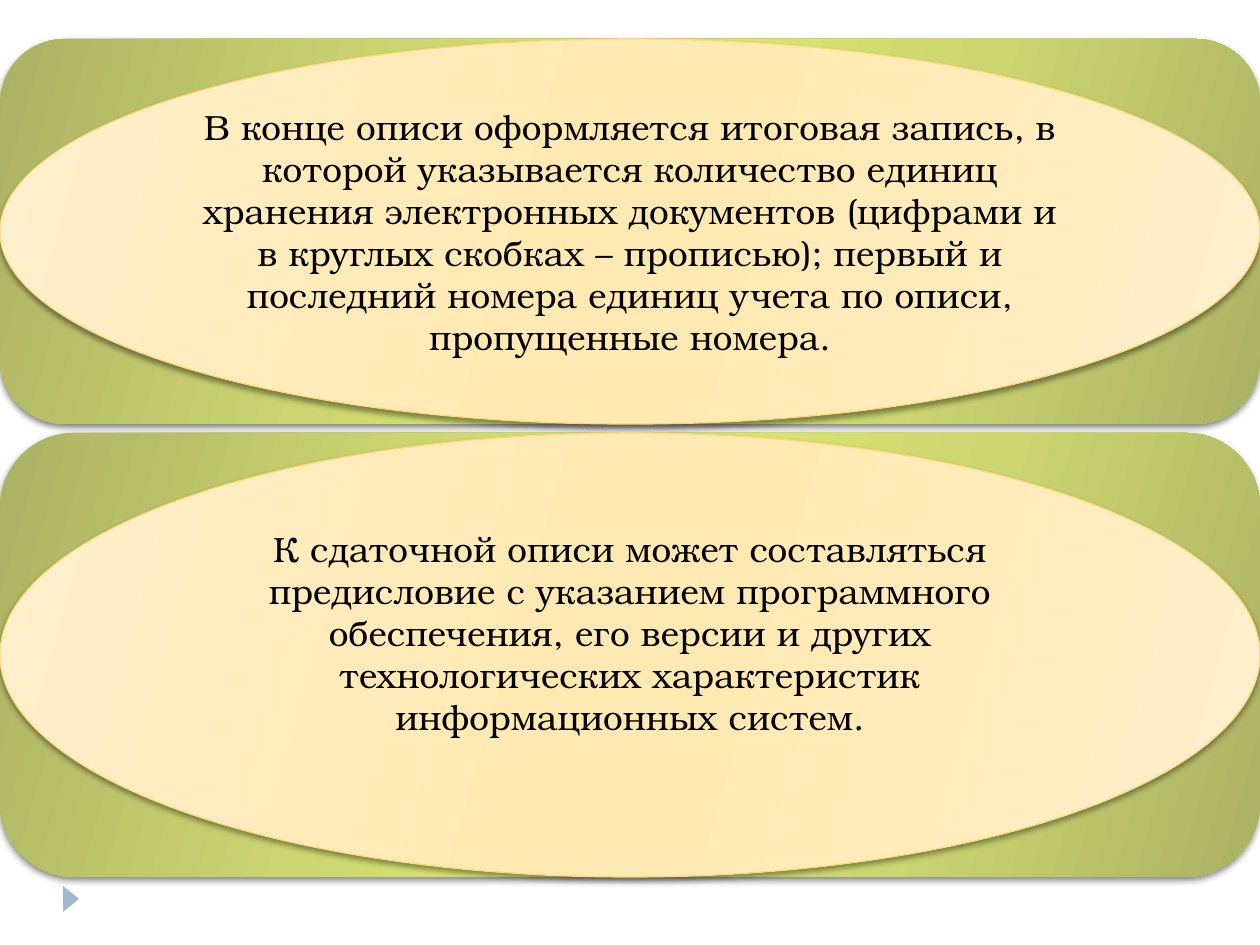
"""Build a slide of two green panels, each holding an oval with a note on archive inventories."""
from lxml.etree import SubElement
from pptx import Presentation
from pptx.dml.color import RGBColor
from pptx.enum.shapes import MSO_SHAPE as Shape
from pptx.enum.text import MSO_ANCHOR as Anchor, PP_ALIGN as Align
from pptx.oxml.ns import qn
from pptx.util import Pt

PX = 914400 // 126
WIDTH, HEIGHT = 1260, 945
FONT = "TeX Gyre Bonum"
BLACK = RGBColor(0x00, 0x00, 0x00)
BLUE = RGBColor(0x9F, 0xB8, 0xCD)
GOLD = RGBColor(0xFA, 0xDA, 0x7A)
GREENS = [RGBColor(0xAC, 0xB2, 0x64), RGBColor(0xCC, 0xD5, 0x70), RGBColor(0xD9, 0xE3, 0x71)]
CREAMS = [RGBColor(0xFF, 0xF0, 0xCF), RGBColor(0xFF, 0xEB, 0xBA), RGBColor(0xFF, 0xE9, 0xB3)]
STOPS = [0, 30, 45, 55, 73, 100]

PANELS = [
    (39, 385, 6, "В конце описи оформляется итоговая запись, в которой указывается "
     "количество единиц хранения электронных документов (цифрами и в круглых скобках – "
     "прописью); первый и последний номера единиц учета по описи, пропущенные номера."),
    (433, 444, 52, "К сдаточной описи может составляться предисловие с указанием "
     "программного обеспечения, его версии и других технологических характеристик "
     "информационных систем."),
]


def add_shape(slide, kind, left, top, width, height):
    """Add a preset shape without line or shadow."""
    shape = slide.shapes.add_shape(kind, left * PX, top * PX, width * PX, height * PX)
    shape.shadow.inherit = False
    shape.line.fill.background()
    return shape


def add_color(parent, color, alpha=None):
    """Append an RGB colour, with opacity in percent if given."""
    element = SubElement(parent, qn("a:srgbClr"), val=str(color))
    if alpha is not None:
        SubElement(element, qn("a:alpha"), val=str(alpha * 1000))


def set_gradient(shape, colors):
    """Fill the shape with a gradient that runs through the colours and back."""
    shape.fill.gradient()
    shape.fill.gradient_angle = 344
    stop_list = shape._element.spPr.find(".//" + qn("a:gsLst"))
    for stop in list(stop_list):
        stop_list.remove(stop)
    for position, color in zip(STOPS, colors + colors[::-1]):
        add_color(SubElement(stop_list, qn("a:gs"), pos=str(position * 1000)), color)


def set_shadow(shape, alpha, blur):
    """Cast a soft black shadow downwards."""
    effects = shape._element.spPr.find(qn("a:effectLst"))
    shadow = SubElement(effects, qn("a:outerShdw"), blurRad=str(Pt(blur)), dist=str(Pt(2)),
                        dir="5400000", rotWithShape="0")
    add_color(shadow, BLACK, alpha)


def set_text(shape, text, bottom_margin):
    """Write centred text into the shape."""
    frame = shape.text_frame
    frame.text = text
    frame.word_wrap = True
    frame.vertical_anchor = Anchor.MIDDLE
    frame.margin_bottom = bottom_margin * PX
    paragraph = frame.paragraphs[0]
    paragraph.alignment = Align.CENTER
    font = paragraph.runs[0].font
    font.name, font.size = FONT, Pt(20)
    font.color.rgb = BLACK


def add_panel(slide, top, height, bottom_margin, text):
    """Add a full-width rounded panel with an oval note on it."""
    panel = add_shape(slide, Shape.ROUNDED_RECTANGLE, 0, top, WIDTH, height)
    set_gradient(panel, GREENS)
    set_shadow(panel, 50, 4)
    oval = add_shape(slide, Shape.OVAL, 0, top, WIDTH, height)
    set_gradient(oval, CREAMS)
    oval.line.color.rgb = GOLD
    oval.line.width = Pt(0.75)
    set_shadow(oval, 40, 3)
    set_text(oval, text, bottom_margin)


def add_marker(slide):
    """Add the small footer triangle that points right."""
    marker = add_shape(slide, Shape.ISOSCELES_TRIANGLE, 58, 891, 26, 16)
    marker.rotation = 90
    marker.fill.solid()
    marker.fill.fore_color.rgb = BLUE


def main():
    """Build and save the slide."""
    presentation = Presentation()
    presentation.slide_width, presentation.slide_height = WIDTH * PX, HEIGHT * PX
    slide = presentation.slides.add_slide(presentation.slide_layouts[6])
    add_marker(slide)
    for panel in PANELS:
        add_panel(slide, *panel)
    presentation.save("out.pptx")


if __name__ == "__main__":
    main()
